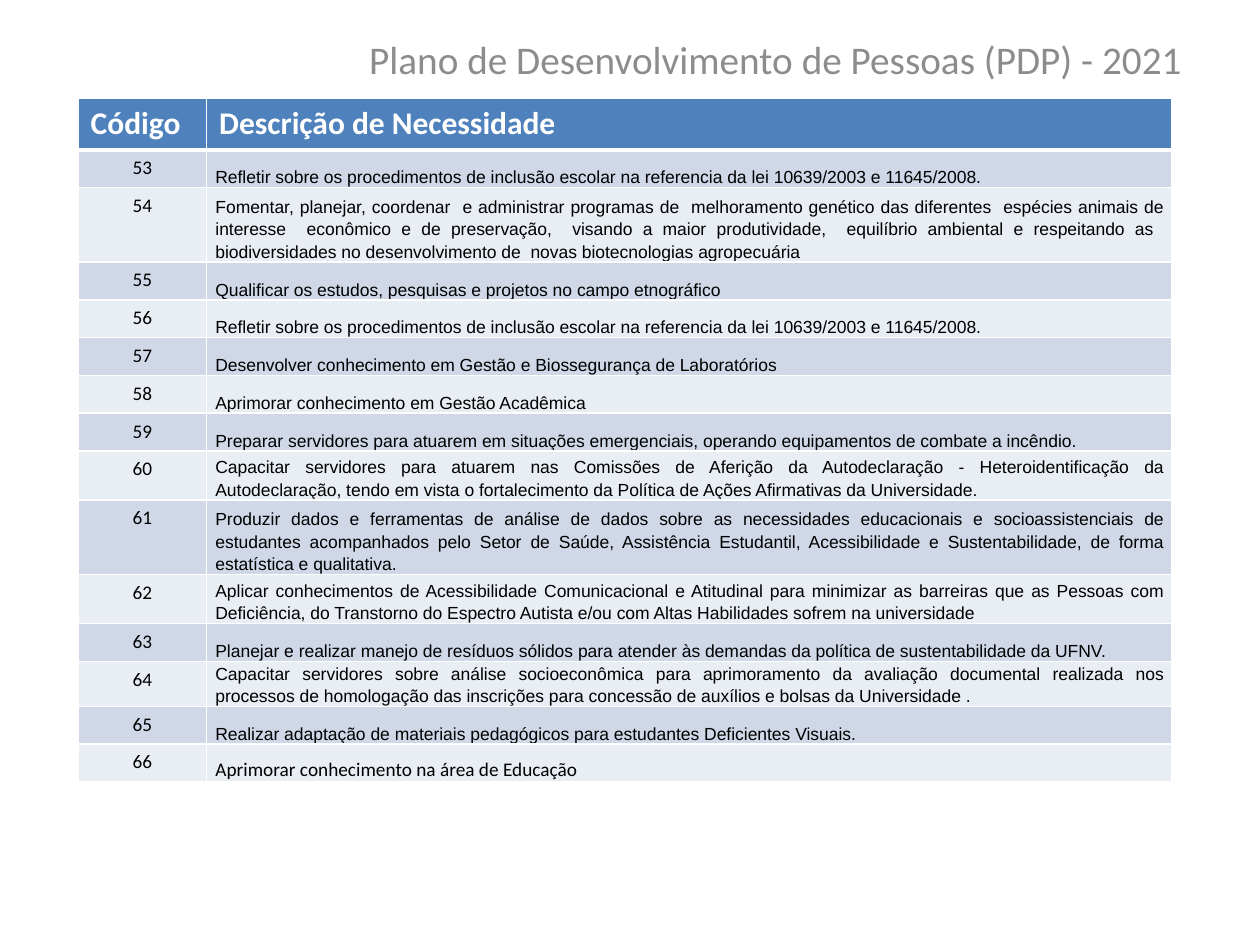
from lxml.etree import SubElement
from pptx import Presentation
from pptx.dml.color import RGBColor
from pptx.enum.text import MSO_ANCHOR as Anchor, PP_ALIGN as Align
from pptx.oxml.ns import qn
from pptx.util import Inches, Pt

WHITE = RGBColor(0xFF, 0xFF, 0xFF)
BLACK = RGBColor(0x00, 0x00, 0x00)
GRAY = RGBColor(0x8C, 0x8C, 0x8C)
HEADER_BLUE = RGBColor(0x4F, 0x81, 0xBD)
BANDS = [RGBColor(0xD0, 0xD8, 0xE8), RGBColor(0xE9, 0xED, 0xF4)]

FIRST_CODE = 53
COLUMN_WIDTHS = [1.02, 7.66]
HEADER_HEIGHT = 0.41
ROW_HEIGHT = 0.3
TALL_ROWS = {54: 0.59, 60: 0.39, 61: 0.59, 62: 0.39}

HEADINGS = ["Código", "Descrição de Necessidade"]
NEEDS = [
    "Refletir sobre os procedimentos de inclusão escolar na referencia da lei 10639/2003 e 11645/2008.",
    "Fomentar, planejar, coordenar  e administrar programas de  melhoramento genético das diferentes  "
    "espécies animais de interesse  econômico e de preservação,  visando a maior produtividade,  "
    "equilíbrio ambiental e respeitando as  biodiversidades no desenvolvimento de  "
    "novas biotecnologias agropecuária",
    "Qualificar os estudos, pesquisas e projetos no campo etnográfico",
    "Refletir sobre os procedimentos de inclusão escolar na referencia da lei 10639/2003 e 11645/2008.",
    "Desenvolver conhecimento em Gestão e Biossegurança de Laboratórios",
    "Aprimorar conhecimento em Gestão Acadêmica",
    "Preparar servidores para atuarem em situações emergenciais, operando equipamentos de combate a incêndio.",
    "Capacitar servidores para atuarem nas Comissões de Aferição da Autodeclaração - Heteroidentificação "
    "da Autodeclaração, tendo em vista o fortalecimento da Política de Ações Afirmativas da Universidade.",
    "Produzir dados e ferramentas de análise de dados sobre as necessidades educacionais e "
    "socioassistenciais de estudantes acompanhados pelo Setor de Saúde, Assistência Estudantil, "
    "Acessibilidade e Sustentabilidade, de forma estatística e qualitativa.",
    "Aplicar conhecimentos de Acessibilidade Comunicacional e Atitudinal para minimizar as barreiras "
    "que as Pessoas com Deficiência, do Transtorno do Espectro Autista e/ou com Altas Habilidades "
    "sofrem na universidade",
    "Planejar e realizar manejo de resíduos sólidos para atender às demandas da política de "
    "sustentabilidade da UFNV.",
    "Capacitar servidores sobre análise socioeconômica para aprimoramento da avaliação documental "
    "realizada nos processos de homologação das inscrições para concessão de auxílios e bolsas da "
    "Universidade .",
    "Realizar adaptação de materiais pedagógicos para estudantes Deficientes Visuais.",
    "Aprimorar conhecimento na área de Educação",
]


def write_text(frame, text, size, color=BLACK, font="Calibri", bold=False,
               align=Align.LEFT, line_spacing=None, space_before=0):
    paragraph = frame.paragraphs[0]
    paragraph.alignment = align
    paragraph.line_spacing = line_spacing
    paragraph.space_before = Pt(space_before)
    run = paragraph.add_run()
    run.text = text
    run.font.size = Pt(size)
    run.font.name = font
    run.font.bold = bold
    run.font.color.rgb = color


def style_cell(cell, fill, top=1, bottom=1):
    """Give the cell white borders, widths in points, and a solid fill."""
    properties = cell._tc.get_or_add_tcPr()
    for side, width in (("L", 1), ("R", 1), ("T", top), ("B", bottom)):
        line = SubElement(properties, qn(f"a:ln{side}"), w=str(Pt(width)))
        solid = SubElement(line, qn("a:solidFill"))
        SubElement(solid, qn("a:srgbClr"), val=str(WHITE))
    cell.fill.solid()
    cell.fill.fore_color.rgb = fill


def add_heading(slide):
    title = slide.shapes.title
    title._element.getparent().remove(title._element)
    heading = slide.placeholders[1]
    heading.left, heading.top = Inches(2.66), Inches(0.23)
    heading.width, heading.height = Inches(7), Inches(0.75)
    heading.text_frame.vertical_anchor = Anchor.TOP
    write_text(heading.text_frame, "Plano de Desenvolvimento de Pessoas (PDP) - 2021",
               22.4, color=GRAY, align=Align.CENTER, space_before=4.5)


def fill_description(cell, text, **text_format):
    cell.vertical_anchor = Anchor.BOTTOM
    cell.margin_left = cell.margin_right = Inches(0.07)
    cell.margin_top = cell.margin_bottom = 0
    write_text(cell.text_frame, text, align=Align.JUSTIFY, line_spacing=1.15, **text_format)


def add_needs_table(slide):
    codes = range(FIRST_CODE, FIRST_CODE + len(NEEDS))
    heights = [HEADER_HEIGHT] + [TALL_ROWS.get(code, ROW_HEIGHT) for code in codes]
    table = slide.shapes.add_table(
        len(heights), len(COLUMN_WIDTHS), Inches(0.62), Inches(0.78),
        Inches(sum(COLUMN_WIDTHS)), Inches(sum(heights))).table
    for column, width in zip(table.columns, COLUMN_WIDTHS):
        column.width = Inches(width)
    for row, height in zip(table.rows, heights):
        row.height = Inches(height)

    for column, heading in enumerate(HEADINGS):
        cell = table.cell(0, column)
        style_cell(cell, HEADER_BLUE, bottom=3)
        write_text(cell.text_frame, heading, 18, color=WHITE, bold=True)

    for row, (code, need) in enumerate(zip(codes, NEEDS), start=1):
        code_cell, need_cell = table.cell(row, 0), table.cell(row, 1)
        for cell in (code_cell, need_cell):
            style_cell(cell, BANDS[(row - 1) % 2], top=3 if row == 1 else 1)
        write_text(code_cell.text_frame, str(code), 11, align=Align.CENTER)
        if row == len(NEEDS):
            fill_description(need_cell, need, size=11)
        else:
            fill_description(need_cell, need, size=10, font="Arial")


def main():
    presentation = Presentation()
    presentation.slide_width, presentation.slide_height = Inches(10), Inches(7.5)
    slide = presentation.slides.add_slide(presentation.slide_layouts[0])
    add_heading(slide)
    add_needs_table(slide)
    presentation.save("out.pptx")


if __name__ == "__main__":
    main()
